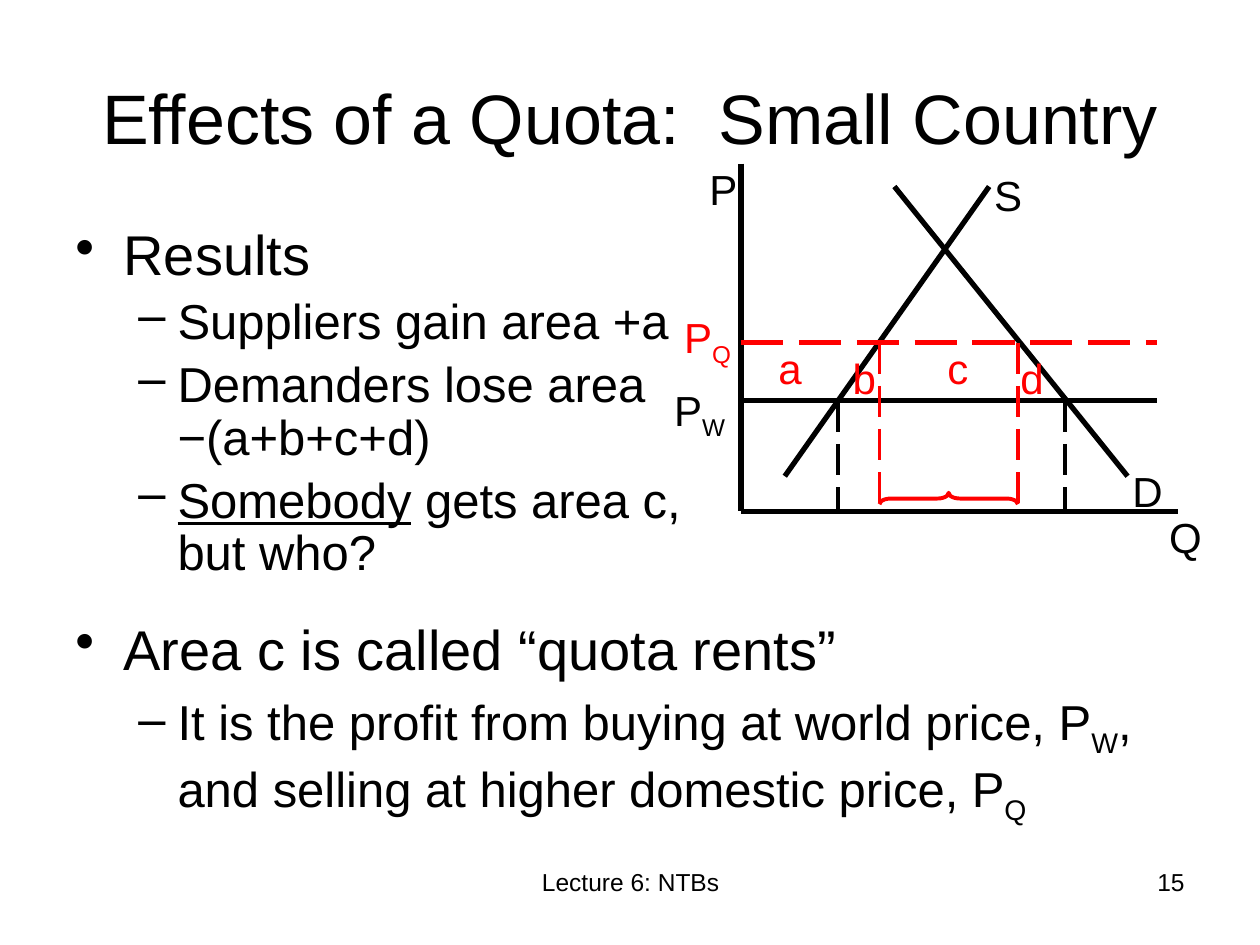
from lxml import etree
from pptx import Presentation
from pptx.dml.color import RGBColor
from pptx.enum.dml import MSO_LINE
from pptx.enum.shapes import MSO_CONNECTOR, MSO_SHAPE
from pptx.enum.text import MSO_ANCHOR, PP_ALIGN
from pptx.oxml.ns import qn
from pptx.util import Cm, Pt

STRAIGHT = MSO_CONNECTOR.STRAIGHT
LONG_DASH = MSO_LINE.LONG_DASH
BRACE = MSO_SHAPE.RIGHT_BRACE
LEFT, CENTER, RIGHT = PP_ALIGN.LEFT, PP_ALIGN.CENTER, PP_ALIGN.RIGHT
TOP, MIDDLE = MSO_ANCHOR.TOP, MSO_ANCHOR.MIDDLE

COLORS = {"ink": "000000", "quota": "FF0000"}
BULLETS = [("•", 32, 0.97, -0.97), ("–", 28, 2.06, -0.79)]

prs = Presentation()
prs.slide_width, prs.slide_height = Cm(25.4), Cm(19.05)
slide = prs.slides.add_slide(prs.slide_layouts[5])
shapes = slide.shapes


def add_text(text, box, holder=None, size=24, color="ink", align=LEFT,
             anchor=TOP, bulleted=False, spacing=1.0):
    left, top, width, height = map(Cm, box)
    holder = holder or shapes.add_textbox(left, top, width, height)
    holder.left, holder.top, holder.width, holder.height = left, top, width, height
    frame = holder.text_frame
    frame.word_wrap = True
    frame.vertical_anchor = anchor
    for number, line in enumerate(text.split("\n")):
        paragraph = frame.add_paragraph() if number else frame.paragraphs[0]
        paragraph.alignment = align
        paragraph.line_spacing = spacing
        if bulleted:
            level = int(line.startswith("-"))
            line = line.removeprefix("-")
            mark, size, margin, indent = BULLETS[level]
            paragraph.level = level
            paragraph.space_before = Pt(size * 0.2)
            properties = paragraph._p.get_or_add_pPr()
            properties.set("marL", str(Cm(margin)))
            properties.set("indent", str(Cm(indent)))
            etree.SubElement(properties, qn("a:buChar")).set("char", mark)
        for piece in line.split("|"):
            for part_number, part in enumerate(piece.split("\v")):
                if part_number:
                    paragraph.add_line_break()
                run = paragraph.add_run()
                run.text = part.lstrip("_*")
                run.font.name = "Arial"
                run.font.size = Pt(size)
                run.font.color.rgb = RGBColor.from_string(COLORS[color])
                if part.startswith("_"):
                    run.font._element.set("baseline", "-25000")
                if part.startswith("*"):
                    run.font.underline = True


def add_line(start, end, color="ink", width=3, dash=None):
    line = shapes.add_connector(STRAIGHT, *map(Cm, start + end))
    line.line.color.rgb = RGBColor.from_string(COLORS[color])
    line.line.width = Pt(width)
    if dash:
        line.line.dash_style = dash
    etree.SubElement(line._element.spPr, qn("a:effectLst"))


add_text("Lecture 6: NTBs", (8.69, 17.35, 8.05, 1.32), size=14, align=CENTER)
add_text("15", (18.21, 17.35, 5.92, 1.32), size=14, align=RIGHT)
add_text("Effects of a Quota:  Small Country", (1.27, 0.76, 22.86, 3.18),
         holder=shapes.title, size=40, align=CENTER, anchor=MIDDLE)

results = """Results
-Suppliers gain area +a
-Demanders lose area\v−(a+b+c+d)
-|*Somebody| gets area c, but who?"""
add_text(results.replace("-|", "-"), (1.27, 4.45, 13.54, 7.82), bulleted=True, spacing=0.9)

rents = """Area c is called “quota rents”
-It is the profit from buying at world price, P|_W|, and selling at higher domestic price, P|_Q"""
add_text(rents, (1.27, 12.27, 22.86, 5.08), bulleted=True)

axis_x, axis_y = 14.94, 10.31
world_price, quota_price, price_end = 8.08, 6.91, 23.32
curve_top, curve_bottom = 3.76, 9.6
quota_supply, quota_demand = 17.73, 20.52

add_line((axis_x, 3.3), (axis_x, axis_y))
add_line((axis_x, axis_y), (23.75, axis_y))
add_line((19.94, curve_top), (15.82, curve_bottom))
add_line((18.03, curve_top), (22.73, curve_bottom))
add_line((axis_x, world_price), (price_end, world_price))
for quantity in (16.89, 21.46):
    add_line((quantity, world_price), (quantity, axis_y), width=2.25, dash=LONG_DASH)
add_line((axis_x, quota_price), (price_end, quota_price), "quota", dash=LONG_DASH)
for quantity in (quota_supply, quota_demand):
    add_line((quantity, quota_price), (quantity, axis_y), "quota", 2.25, LONG_DASH)

for label, left, top, width, color in [
    ("S", 19.79, 3.3, 1.02, "ink"),
    ("D", 22.58, 9.25, 1.02, "ink"),
    ("P|_W", 13.34, 7.62, 1.75, "ink"),
    ("P", 14.05, 3.18, 1.17, "ink"),
    ("P|_Q", 13.54, 6.15, 1.9, "quota"),
    ("Q", 23.32, 10.19, 1.02, "ink"),
    ("a", 15.44, 6.78, 1.02, "quota"),
    ("b", 16.94, 6.99, 1.02, "quota"),
    ("c", 18.85, 6.78, 1.04, "quota"),
    ("d", 20.32, 6.99, 1.04, "quota"),
]:
    add_text(label, (left, top, width, 1.27), color=color)

brace_width, brace_length = 0.23, quota_demand - quota_supply
brace = shapes.add_shape(
    BRACE, Cm((quota_supply + quota_demand - brace_width) / 2),
    Cm(10.05 - brace_length / 2), Cm(brace_width), Cm(brace_length))
brace.rotation = 270
brace.adjustments[0] = 0.995
brace.fill.background()
brace.line.color.rgb = RGBColor.from_string(COLORS["quota"])
brace.line.width = Pt(2.25)
brace.shadow.inherit = False

prs.save("out.pptx")
